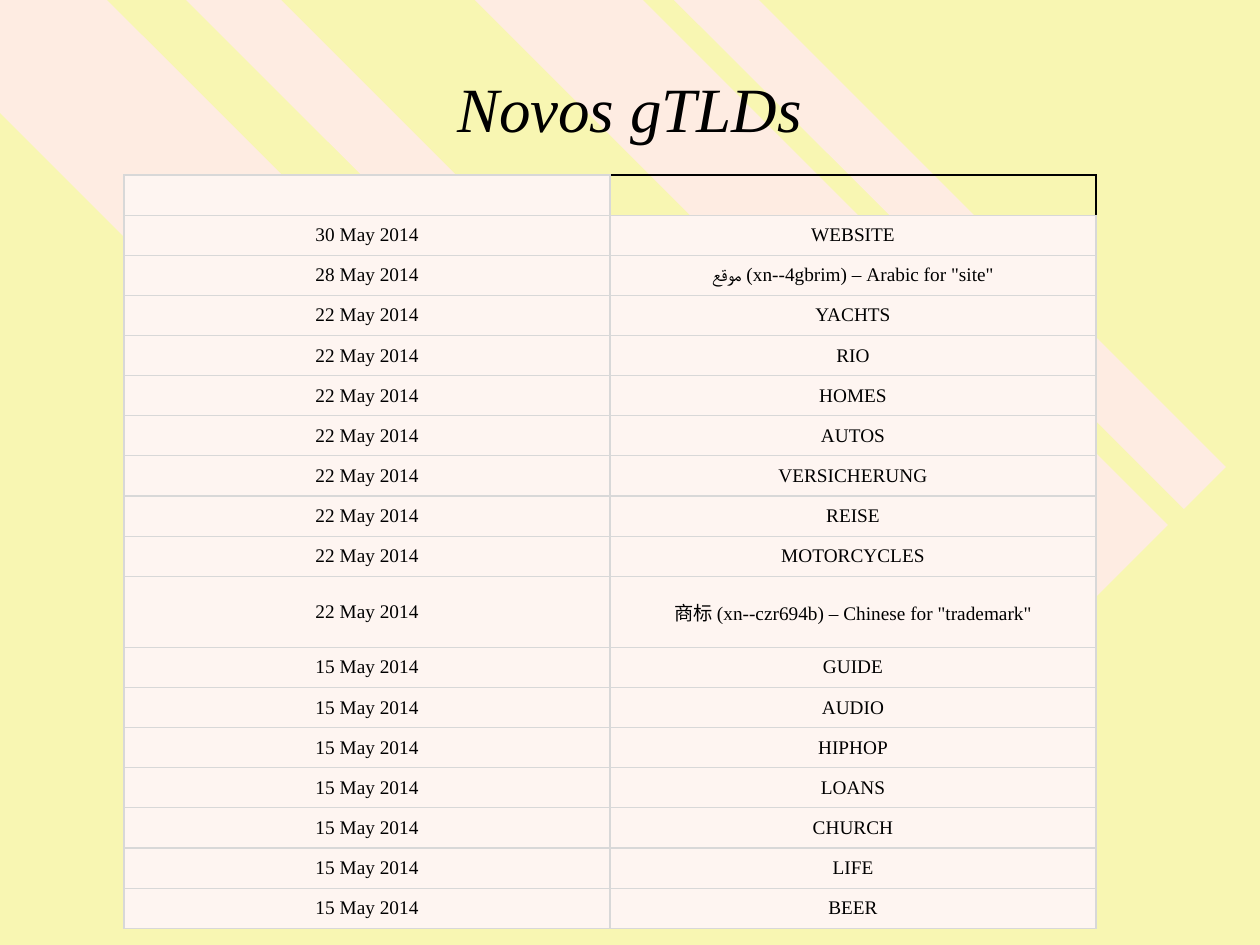
"""Build the slide listing the new gTLDs and their dates."""
from lxml.etree import SubElement
from pptx import Presentation
from pptx.dml.color import RGBColor
from pptx.enum.text import MSO_ANCHOR as ANCHOR, PP_ALIGN as ALIGN
from pptx.oxml.ns import qn
from pptx.util import Emu, Pt

SCALE = 914400 / 126
FONT = "Times New Roman"
COLORS = {"bg": "F8F6B2", "band": "FEECE2", "cell": "FEF5F1", "grid": "D8D8D8", "text": "000000"}
RGB = {name: RGBColor.from_string(value) for name, value in COLORS.items()}
BANDS = [
    [(901, 793), (107, 0), (0, 0), (0, 113), (790, 903)],
    [(281, 0), (987, 706), (940, 753), (186, 0)],
    [(643, 0), (1168, 525), (1084, 609), (475, 0)],
    [(674, 0), (1184, 509), (1226, 467), (759, 0)],
]
RELEASES = [
    ("30 May 2014", ["WEBSITE"]),
    ("28 May 2014", ['موقع (xn--4gbrim) – Arabic for "site"']),
    ("22 May 2014", ["YACHTS", "RIO", "HOMES", "AUTOS", "VERSICHERUNG", "REISE", "MOTORCYCLES",
                     '商标 (xn--czr694b) – Chinese for "trademark"']),
    ("15 May 2014", ["GUIDE", "AUDIO", "HIPHOP", "LOANS", "CHURCH", "LIFE", "BEER"]),
]
ROWS = [("", "")] + [(date, name) for date, names in RELEASES for name in names]
TALL_ROW = 10


def px(n):
    return Emu(round(n * SCALE))


def set_borders(cell, colors):
    tcPr = cell._tc.get_or_add_tcPr()
    for i, (side, color) in enumerate(colors.items()):
        ln = SubElement(tcPr, qn(f"a:{side}"), w=str(Pt(0.75)))
        fill = SubElement(ln, qn("a:solidFill"))
        SubElement(fill, qn("a:srgbClr"), val=COLORS[color])
        tcPr.insert(i, ln)


prs = Presentation()
prs.slide_width, prs.slide_height = px(1260), px(945)
s = prs.slides.add_slide(prs.slide_layouts[5])
s.background.fill.solid()
s.background.fill.fore_color.rgb = RGB["bg"]

for start, *points in BANDS:
    fb = s.shapes.build_freeform(*start, scale=SCALE)
    fb.add_line_segments(points, close=True)
    sp = fb.convert_to_shape()
    sp.shadow.inherit = False
    sp.fill.solid()
    sp.fill.fore_color.rgb = RGB["band"]
    sp.line.fill.background()

title = s.shapes.title
s.shapes._spTree.append(title._element)
title.left, title.top, title.width, title.height = px(136), px(34), px(987), px(157)
tf = title.text_frame
tf.text = "Novos gTLDs"
tf.vertical_anchor = ANCHOR.MIDDLE
p = tf.paragraphs[0]
p.alignment = ALIGN.CENTER
p.line_spacing = 0.89
r = p.runs[0]
r.font.name, r.font.size, r.font.italic = FONT, Pt(36), True
r.font.color.rgb = RGB["text"]

table = s.shapes.add_table(len(ROWS), 2, px(124), px(175), px(972), px(754)).table
table.first_row = table.horz_banding = False
for i, row in enumerate(ROWS):
    table.rows[i].height = px(71) if i == TALL_ROW else Emu(px(683) // (len(ROWS) - 1))
    for j, text in enumerate(row):
        cell = table.cell(i, j)
        cell.margin_left = cell.margin_right = px(8)
        cell.margin_top = cell.margin_bottom = px(4)
        cell.vertical_anchor = ANCHOR.MIDDLE
        open_cell = (i, j) == (0, 1)
        if open_cell:
            cell.fill.background()
        else:
            cell.fill.solid()
            cell.fill.fore_color.rgb = RGB["cell"]
        edge = "text" if open_cell else "grid"
        set_borders(cell, {"lnL": "grid", "lnR": edge, "lnT": edge, "lnB": "grid"})
        p = cell.text_frame.paragraphs[0]
        p.alignment = ALIGN.CENTER
        if text:
            p.text = text
            r = p.runs[0]
            r.font.name, r.font.size = FONT, Pt(11)
            r.font.color.rgb = RGB["text"]
        else:
            p._p.get_or_add_endParaRPr().set("sz", "1100")

prs.save("out.pptx")
